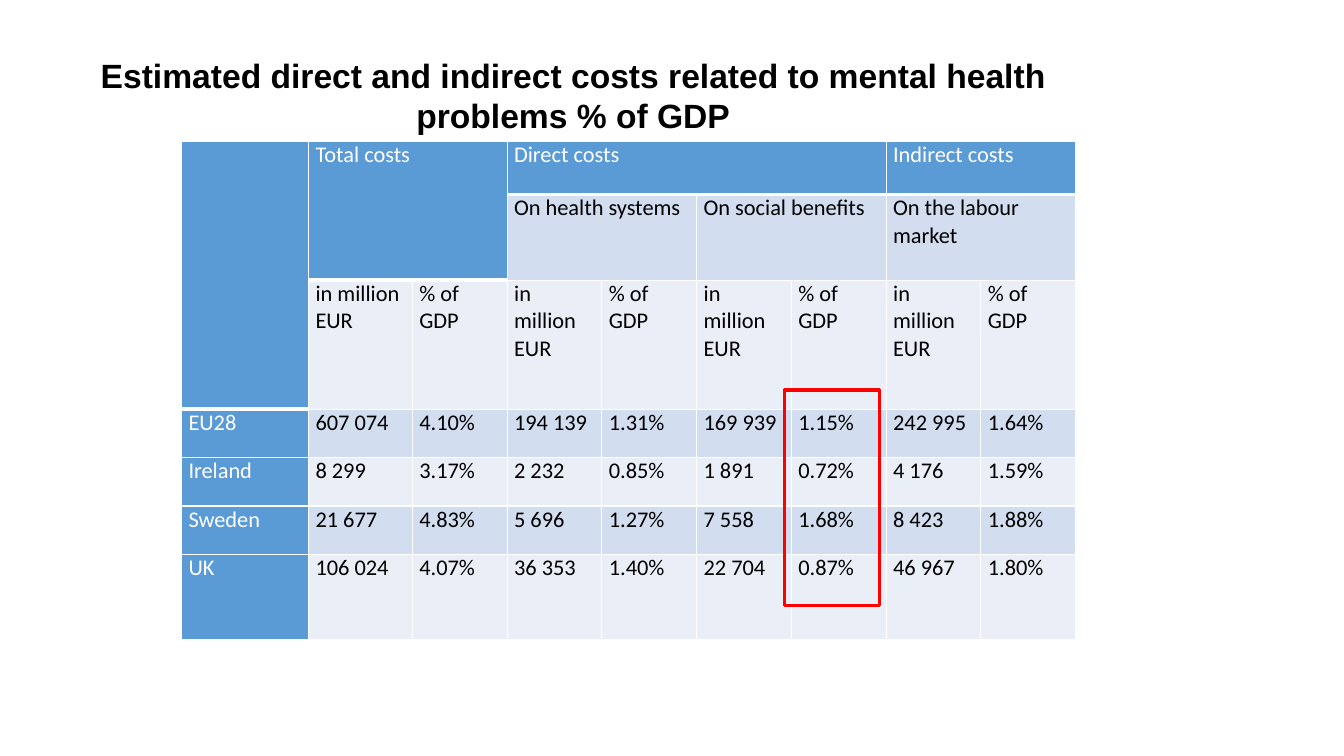
import pptx
import pptx.util
import pptx.dml.color
import pptx.enum.shapes
import pptx.enum.text
import pptx.oxml.ns
from lxml import etree

Inches = pptx.util.Inches
Pt = pptx.util.Pt
RGBColor = pptx.dml.color.RGBColor

WHITE = RGBColor(0xFF, 0xFF, 0xFF)
BLACK = RGBColor(0x00, 0x00, 0x00)
BLUE = RGBColor(0x5B, 0x9B, 0xD5)
BAND_DARK = RGBColor(0xD2, 0xDE, 0xEF)
BAND_LIGHT = RGBColor(0xEA, 0xEF, 0xF7)
RED = RGBColor(0xFF, 0x00, 0x00)

TITLE = "Estimated direct and indirect costs related to mental health problems % of GDP"
COLUMN_WIDTHS = [1.26, 1.03] + [0.94] * 7
ROW_HEIGHTS = [0.53, 0.85, 1.28, 0.48, 0.48, 0.48, 0.85]
ROWS = [
    ["", "Total costs", "", "Direct costs", "", "", "", "Indirect costs", ""],
    ["", "", "", "On health systems", "", "On social benefits", "", "On the labour market", ""],
    [""] + ["in million EUR", "% of GDP"] * 4,
    ["EU28", "607 074", "4.10%", "194 139", "1.31%", "169 939", "1.15%", "242 995", "1.64%"],
    ["Ireland", "8 299", "3.17%", "2 232", "0.85%", "1 891", "0.72%", "4 176", "1.59%"],
    ["Sweden", "21 677", "4.83%", "5 696", "1.27%", "7 558", "1.68%", "8 423", "1.88%"],
    ["UK", "106 024", "4.07%", "36 353", "1.40%", "22 704", "0.87%", "46 967", "1.80%"],
]
# First and last cell of each merged area, as (row, column)
MERGES = [
    ((0, 0), (2, 0)), ((0, 1), (1, 2)), ((0, 3), (0, 6)), ((0, 7), (0, 8)),
    ((1, 3), (1, 4)), ((1, 5), (1, 6)), ((1, 7), (1, 8)),
]


def write_text(text_frame, text, *, size, font, color, bold=False, align=None, space_after=0):
    paragraph = text_frame.paragraphs[0]
    paragraph.alignment = align
    paragraph.space_before = Pt(0)
    paragraph.space_after = Pt(space_after)
    run = paragraph.add_run()
    run.text = text
    run.font.size = Pt(size)
    run.font.name = font
    run.font.bold = bold
    run.font.color.rgb = color


class SlideBuilder:
    """Holds the fonts and the current slide."""

    title_font = "Arial"
    table_font = "Calibri"

    def __init__(self, slide):
        self.slide = slide

    def add_title(self, text, left, top, width, height):
        title = self.slide.shapes.title
        title.left, title.top = Inches(left), Inches(top)
        title.width, title.height = Inches(width), Inches(height)
        text_frame = title.text_frame
        text_frame.word_wrap = True
        text_frame.auto_size = pptx.enum.text.MSO_AUTO_SIZE.NONE
        text_frame.vertical_anchor = pptx.enum.text.MSO_ANCHOR.TOP
        write_text(text_frame, text, size=24, font=self.title_font, color=BLACK, bold=True,
                   align=pptx.enum.text.PP_ALIGN.CENTER)

    def add_border(self, cell, side, width):
        properties = cell._tc.get_or_add_tcPr()
        name = pptx.oxml.ns.qn
        line = etree.SubElement(properties, name("a:ln" + side), w=str(Pt(width)))
        fill = etree.SubElement(line, name("a:solidFill"))
        etree.SubElement(fill, name("a:srgbClr"), val=str(WHITE))

    def format_cell(self, cell, text, row, column):
        is_header = row == 0 or column == 0 or (row == 1 and column < 3)
        for side in "LRTB":
            self.add_border(cell, side, 3 if row == 0 and side == "B" else 1)
        cell.fill.solid()
        cell.fill.fore_color.rgb = BLUE if is_header else (BAND_DARK if row % 2 else BAND_LIGHT)
        cell.margin_left = cell.margin_right = Inches(0.07)
        cell.margin_top = cell.margin_bottom = 0
        if text:
            write_text(cell.text_frame, text, size=16, font=self.table_font,
                       color=WHITE if is_header else BLACK, space_after=8)

    def add_table(self, rows, left, top):
        table = self.slide.shapes.add_table(
            len(ROW_HEIGHTS), len(COLUMN_WIDTHS), Inches(left), Inches(top),
            Inches(sum(COLUMN_WIDTHS)), Inches(sum(ROW_HEIGHTS))).table
        for column, width in zip(table.columns, COLUMN_WIDTHS):
            column.width = Inches(width)
        for row, height in zip(table.rows, ROW_HEIGHTS):
            row.height = Inches(height)
        for row_index, texts in enumerate(rows):
            for column_index, text in enumerate(texts):
                self.format_cell(table.cell(row_index, column_index), text,
                                 row_index, column_index)
        for first, last in MERGES:
            table.cell(*first).merge(table.cell(*last))

    def add_frame(self, left, top, width, height):
        frame = self.slide.shapes.add_shape(
            pptx.enum.shapes.MSO_SHAPE.RECTANGLE,
            Inches(left), Inches(top), Inches(width), Inches(height))
        frame.shadow.inherit = False
        frame.fill.background()
        frame.line.color.rgb = RED
        frame.line.width = Pt(2.25)


def main():
    presentation = pptx.Presentation()
    presentation.slide_width = Inches(13.33)
    presentation.slide_height = Inches(7.5)
    title_only = presentation.slide_layouts[5]
    builder = SlideBuilder(presentation.slides.add_slide(title_only))

    # Heading
    builder.add_title(TITLE, 0.7, 0.49, 9.97, 0.91)

    # Cost table
    builder.add_table(ROWS, 1.8, 1.4)

    # Highlight on the social benefits share
    builder.add_frame(7.78, 3.87, 0.94, 2.14)

    presentation.save("out.pptx")


if __name__ == "__main__":
    main()
